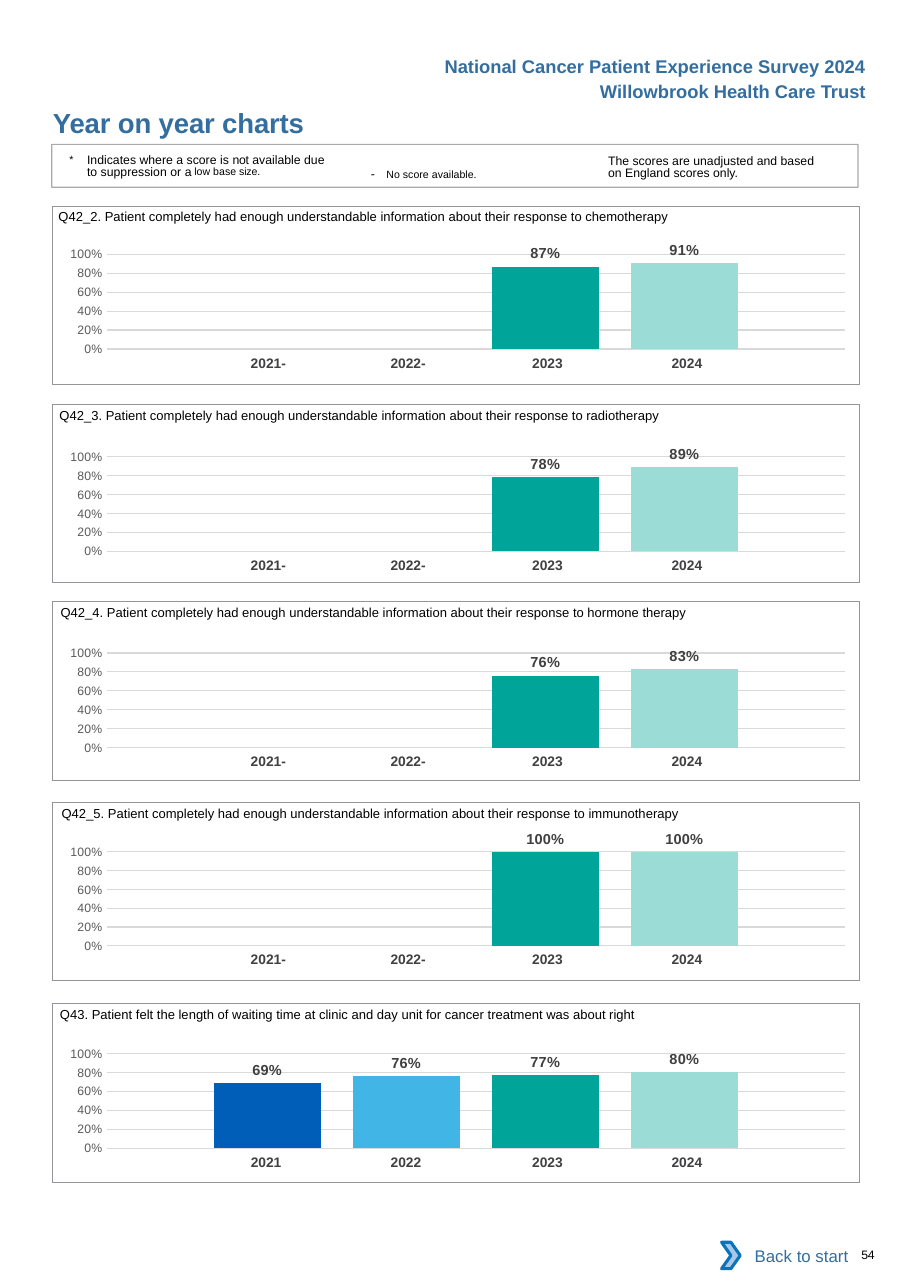
from dataclasses import dataclass
from typing import Optional

from lxml import etree
from pptx import Presentation
from pptx.chart.data import CategoryChartData
from pptx.dml.color import RGBColor
from pptx.enum.chart import XL_CHART_TYPE, XL_LABEL_POSITION, XL_TICK_MARK
from pptx.enum.shapes import MSO_SHAPE
from pptx.enum.text import MSO_ANCHOR, PP_ALIGN
from pptx.oxml import parse_xml
from pptx.oxml.ns import nsdecls, qn
from pptx.util import Pt

COLUMN_CLUSTERED = XL_CHART_TYPE.COLUMN_CLUSTERED
OUTSIDE_END = XL_LABEL_POSITION.OUTSIDE_END
NO_TICK = XL_TICK_MARK.NONE
RECTANGLE, CHEVRON = MSO_SHAPE.RECTANGLE, MSO_SHAPE.CHEVRON
LEFT, CENTER, RIGHT = PP_ALIGN.LEFT, PP_ALIGN.CENTER, PP_ALIGN.RIGHT
MIDDLE = MSO_ANCHOR.MIDDLE

BLACK = RGBColor(0x00, 0x00, 0x00)
WHITE = RGBColor(0xFF, 0xFF, 0xFF)
HEADING_BLUE = RGBColor(0x33, 0x6E, 0x9F)
FRAME_GREY = RGBColor(0x93, 0x95, 0x98)
GRID_GREY = RGBColor(0xD9, 0xD9, 0xD9)
AXIS_GREY = RGBColor(0x59, 0x59, 0x59)
LABEL_GREY = RGBColor(0x40, 0x40, 0x40)
YEAR_GREY = RGBColor(0x41, 0x40, 0x42)
CHEVRON_FILL = RGBColor(0xA8, 0xC7, 0xE9)
CHEVRON_LINE = RGBColor(0x0A, 0x74, 0xBB)

YEARS = ("2021", "2022", "2023", "2024")
YEAR_COLORS = (RGBColor(0x00, 0x5E, 0xB8), RGBColor(0x41, 0xB6, 0xE6),
               RGBColor(0x00, 0xA4, 0x99), RGBColor(0x9C, 0xDC, 0xD7))
YEAR_WIDTHS = (91.4, 91.4, 96.5, 91.4)
YEAR_RIGHT_INSETS = (0, 0, 2.9, 8.6)
PLOT_LAYOUT = {"x": 0.079, "y": 0.145, "w": 0.915, "h": 0.666}
NO_TABLE_STYLE = "{2D5ABB26-0587-4C30-8999-92F81FD0307C}"
FRAME_LEFT, FRAME_WIDTH, FRAME_HEIGHT = 34.4, 527, 116.6


@dataclass
class Run:
    text: str
    size: float = 8
    color: RGBColor = BLACK
    bold: bool = False
    spacing: float = 0
    baseline: int = 0


@dataclass
class Panel:
    question: str
    caption_left: float
    frame_top: float
    chart_top: float
    scores: tuple[Optional[float], ...]


ENOUGH = "Patient completely had enough understandable information about their response to "
PANELS = (
    Panel(f"Q42_2. {ENOUGH}chemotherapy", 38.2, 134.6, 152.8, (None, None, 0.87, 0.91)),
    Panel(f"Q42_3. {ENOUGH}radiotherapy", 38.9, 264.2, 285, (None, None, 0.78, 0.89)),
    Panel(f"Q42_4. {ENOUGH}hormone therapy", 39.6, 393.1, 413.3, (None, None, 0.76, 0.83)),
    Panel(f"Q42_5. {ENOUGH}immunotherapy", 40.3, 524.2, 542.7, (None, None, 1, 1)),
    Panel("Q43. Patient felt the length of waiting time at clinic and day unit for cancer "
          "treatment was about right", 39.2, 655.9, 675, (0.69, 0.76, 0.77, 0.8)),
)


def add_runs(paragraph, runs: list[Run]) -> None:
    for item in runs:
        run = paragraph.add_run()
        run.text = item.text
        font = run.font
        font.name, font.size, font.bold = "Arial", Pt(item.size), item.bold
        font.color.rgb = item.color
        properties = run._r.get_or_add_rPr()
        if item.spacing:
            properties.set("spc", str(round(item.spacing * 100)))
        if item.baseline:
            properties.set("baseline", str(item.baseline * 1000))


def add_text(slide, left: float, top: float, width: float, height: float, runs: list[Run],
             inset: float = 0, inset_top: float = 0, alignment=LEFT,
             line_spacing: Optional[float] = None, hanging: float = 0) -> None:
    box = slide.shapes.add_textbox(Pt(left), Pt(top), Pt(width), Pt(height))
    frame = box.text_frame
    frame.word_wrap = True
    frame.margin_left = frame.margin_right = Pt(inset)
    frame.margin_top, frame.margin_bottom = Pt(inset_top), Pt(0)
    paragraph = frame.paragraphs[0]
    paragraph.alignment = alignment
    if line_spacing:
        paragraph.line_spacing = Pt(line_spacing)
    if hanging:
        properties = paragraph._p.get_or_add_pPr()
        properties.set("marL", str(Pt(hanging)))
        properties.set("indent", str(-Pt(hanging)))
    add_runs(paragraph, runs)


def add_box(slide, kind, left: float, top: float, width: float, height: float,
            fill: Optional[RGBColor] = None, line: Optional[RGBColor] = None,
            line_width: float = 0.5):
    shape = slide.shapes.add_shape(kind, Pt(left), Pt(top), Pt(width), Pt(height))
    shape.shadow.inherit = False
    if fill is None:
        shape.fill.background()
    else:
        shape.fill.solid()
        shape.fill.fore_color.rgb = fill
    if line is None:
        shape.line.fill.background()
    else:
        shape.line.color.rgb = line
        shape.line.width = Pt(line_width)
    return shape


def add_year_table(slide, top: float, scores: tuple[Optional[float], ...]) -> None:
    graphic = slide.shapes.add_table(1, len(YEARS), Pt(124.6), Pt(top),
                                     Pt(sum(YEAR_WIDTHS)), Pt(19.4))
    table = graphic.table
    table.first_row = table.horz_banding = False
    next(graphic._element.iter(qn("a:tableStyleId"))).text = NO_TABLE_STYLE
    for index, (year, score) in enumerate(zip(YEARS, scores)):
        table.columns[index].width = Pt(YEAR_WIDTHS[index])
        cell = table.cell(0, index)
        cell.fill.background()
        cell.margin_left = Pt(10.1 if score is None else 7.2)
        cell.margin_right = Pt(YEAR_RIGHT_INSETS[index])
        paragraph = cell.text_frame.paragraphs[0]
        paragraph.alignment = CENTER
        label = f"{year}-" if score is None else year
        add_runs(paragraph, [Run(label, 9, YEAR_GREY, bold=True)])


def add_score_chart(slide, top: float, scores: tuple[Optional[float], ...]) -> None:
    data = CategoryChartData(number_format="0%")
    data.categories = ["1"]
    for number, score in enumerate(scores, 1):
        data.add_series(f"Series {number}", [score])
    chart = slide.shapes.add_chart(COLUMN_CLUSTERED, Pt(28.3), Pt(top), Pt(527), Pt(92.9),
                                   data).chart
    chart.has_legend = chart.has_title = False
    chart.font.name, chart.font.size, chart.font.color.rgb = "Calibri", Pt(10), BLACK
    chart.category_axis.visible = False

    axis = chart.value_axis
    axis.minimum_scale, axis.maximum_scale, axis.major_unit = 0, 1, 0.2
    axis.major_tick_mark = axis.minor_tick_mark = NO_TICK
    axis.format.line.fill.background()
    axis.major_gridlines.format.line.color.rgb = GRID_GREY
    axis.major_gridlines.format.line.width = Pt(0.75)
    axis.tick_labels.number_format, axis.tick_labels.number_format_is_linked = "0%", False
    font = axis.tick_labels.font
    font.name, font.size, font.color.rgb = "Arial", Pt(8), AXIS_GREY

    plot = chart.plots[0]
    plot.gap_width, plot.overlap, plot.vary_by_categories = 200, -30, False
    for series, color in zip(plot.series, YEAR_COLORS):
        series.format.fill.solid()
        series.format.fill.fore_color.rgb = color
        labels = series.data_labels
        labels.show_value, labels.position = True, OUTSIDE_END
        labels.number_format, labels.number_format_is_linked = "0%", False
        font = labels.font
        font.name, font.size, font.bold, font.color.rgb = "Arial", Pt(9.5), True, LABEL_GREY

    # Fixed plot area and clear background
    area = next(chart._chartSpace.iter(qn("c:plotArea")))
    for old_layout in area.findall(qn("c:layout")):
        area.remove(old_layout)
    layout = parse_xml(f'<c:layout {nsdecls("c")}><c:manualLayout/></c:layout>')
    settings = {"layoutTarget": "inner", "xMode": "edge", "yMode": "edge", **PLOT_LAYOUT}
    for name, value in settings.items():
        etree.SubElement(layout[0], qn(f"c:{name}")).set("val", str(value))
    area.insert(0, layout)
    clear = f'<c:spPr {nsdecls("c", "a")}><a:noFill/><a:ln><a:noFill/></a:ln></c:spPr>'
    area.append(parse_xml(clear))
    area.getparent().addnext(parse_xml(clear))


def main() -> None:
    presentation = Presentation()
    presentation.slide_width, presentation.slide_height = Pt(594.72), Pt(841.68)
    slide = presentation.slides.add_slide(presentation.slide_layouts[6])

    # Headings
    for top, heading in ((32.8, "National Cancer Patient Experience Survey 2024"),
                         (49, "Willowbrook Health Care Trust")):
        add_text(slide, 253, top, 320.1, 21.6, [Run(heading, 12, HEADING_BLUE, bold=True)],
                 inset=7.2, inset_top=3.6, alignment=RIGHT)
    add_text(slide, 34.6, 69.1, 324, 21.6,
             [Run("Year on year charts", 18, HEADING_BLUE, bold=True, spacing=-0.1)])

    # Notes on the scores
    note_frame = add_box(slide, RECTANGLE, 33.8, 94.3, FRAME_WIDTH, 28.1,
                         line=FRAME_GREY, line_width=0.75)
    line_color = next(note_frame.line._ln.iter(qn("a:srgbClr")))
    etree.SubElement(line_color, qn("a:alpha")).set("val", "80000")
    add_text(slide, 45.4, 99.4, 174, 19,
             [Run("*\t", 12, baseline=3), Run("Indicates where a score is "),
              Run("not ", spacing=-0.2), Run("available due to suppression or "),
              Run("a ", spacing=-0.5), Run("low base", 12, baseline=7),
              Run(" size.", 12, spacing=-0.1, baseline=7)],
             inset_top=2.2, line_spacing=8.1, hanging=11.5)
    add_text(slide, 235.4, 101.2, 131.8, 17.3,
             [Run("- ", spacing=2.6), Run("No score available.", 12, baseline=3)],
             inset=7.2, inset_top=3.6)
    add_text(slide, 397.4, 99.4, 143, 19.4,
             [Run("The scores are unadjusted and based on England scores only.")],
             inset_top=2.2, line_spacing=8.1)

    # Question panels
    for panel in PANELS:
        add_year_table(slide, panel.chart_top + 76, panel.scores)
        add_score_chart(slide, panel.chart_top, panel.scores)
        add_box(slide, RECTANGLE, FRAME_LEFT, panel.frame_top, FRAME_WIDTH, FRAME_HEIGHT,
                line=FRAME_GREY)
        add_text(slide, panel.caption_left, panel.frame_top - 4.6, 515, 17.3,
                 [Run(panel.question, 8.5)], inset_top=6.5)

    # Footer
    button = add_box(slide, RECTANGLE, 476.6, 805.4, 85, 30.2, fill=WHITE)
    button.text_frame.vertical_anchor = MIDDLE
    paragraph = button.text_frame.paragraphs[0]
    paragraph.alignment = RIGHT
    add_runs(paragraph, [Run("Back to start", 11, HEADING_BLUE)])
    add_box(slide, CHEVRON, 471.6, 811.8, 12.2, 17.3, CHEVRON_FILL, CHEVRON_LINE, 2)
    add_text(slide, 563, 815.4, 29, 9.4, [Run("54", spacing=-0.2)])

    presentation.save("out.pptx")


if __name__ == "__main__":
    main()
